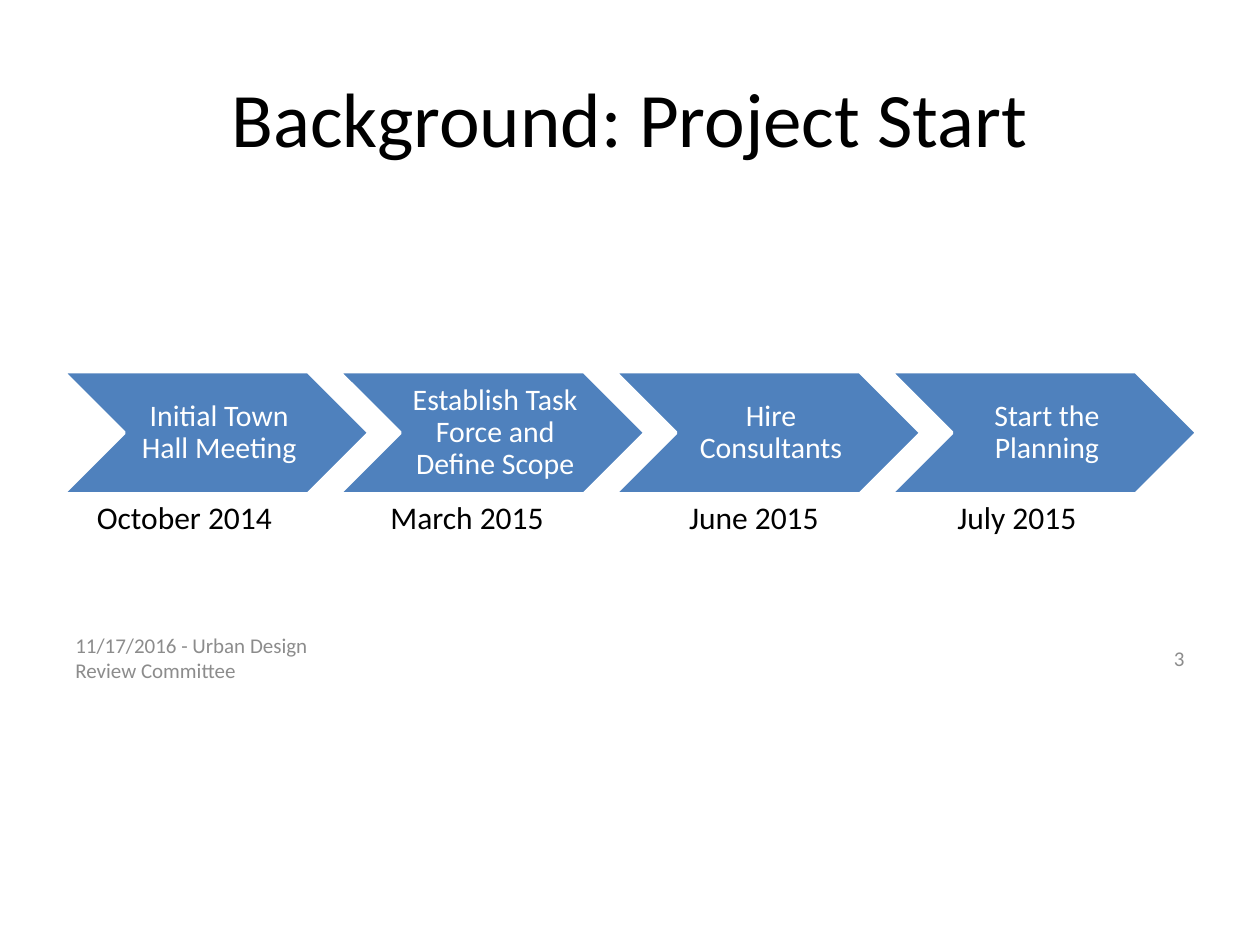
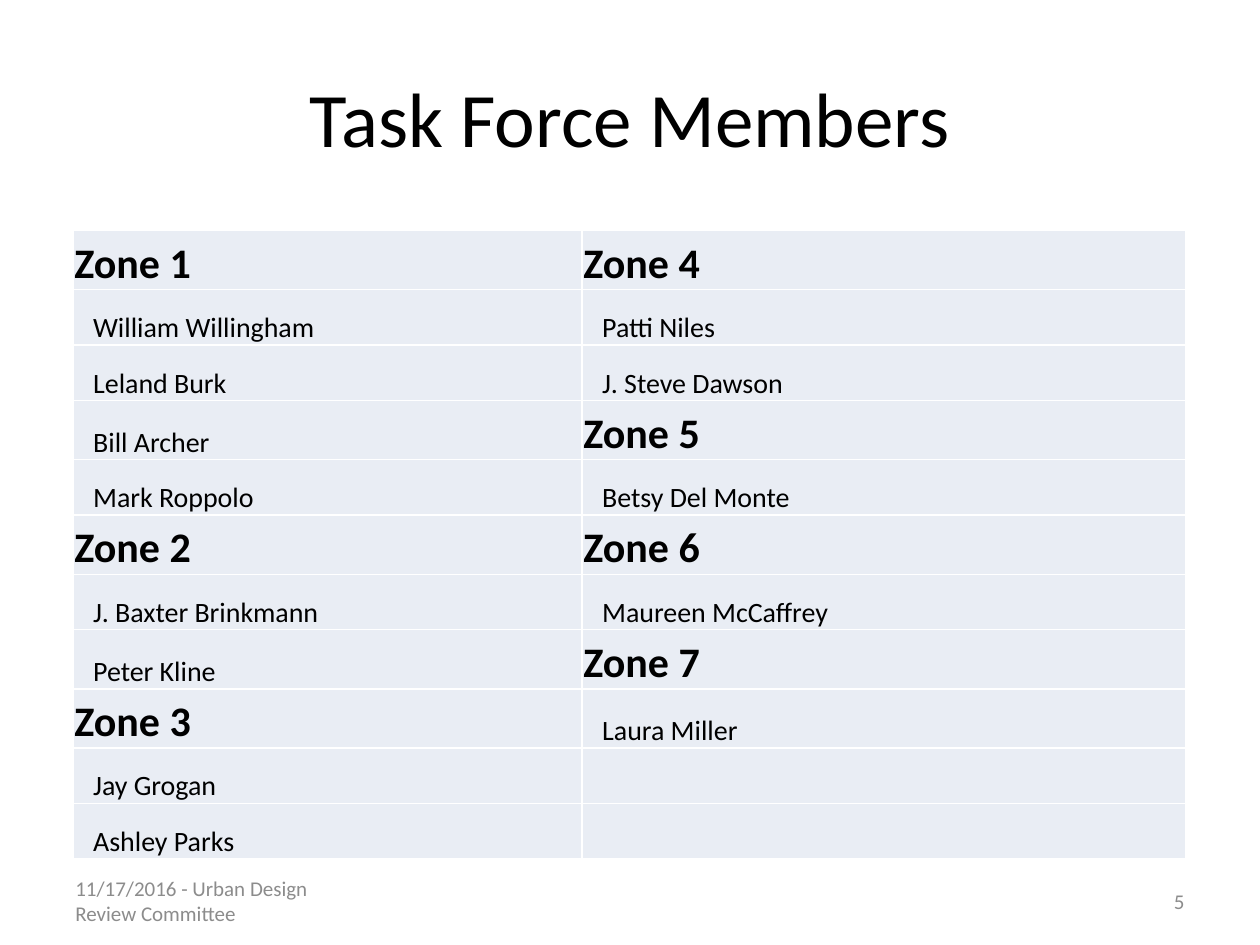
from lxml import etree
from pptx import Presentation
from pptx.dml.color import RGBColor
from pptx.enum.shapes import MSO_SHAPE as Shape
from pptx.enum.text import MSO_ANCHOR as Anchor, MSO_AUTO_SIZE as AutoSize, PP_ALIGN as Align
from pptx.oxml.ns import qn
from pptx.util import Emu, Pt

FONT = "Calibri"
BLACK, WHITE, GREY = "000000", "FFFFFF", "8C8C8C"
BLUE, PALE = "4F81BD", "E9EDF4"
FOOTER = "11/17/2016 - Urban Design Review Committee"

START = {"title": "Background: Project Start", "number": "3", "footer_top": 502}
MEMBERS = {"title": "Task Force Members", "number": "5", "footer_top": 695}

STEPS = [
    ("Initial Town Hall Meeting", "October 2014", 67, 167),
    ("Establish Task Force and Define Scope", "March 2015", 300, 143),
    ("Hire Consultants", "June 2015", 537, 125),
    ("Start the Planning", "July 2015", 750, 116),
]
STEP_LEFT, STEP_TOP, STEP_WIDTH, STEP_HEIGHT, STEP_PITCH = 50, 295, 243, 97, 219
DATE_TOP, DATE_HEIGHT = 390, 40

ZONE_COLUMNS = [
    [
        ("Zone 1", ["William Willingham", "Leland Burk", "Bill Archer", "Mark Roppolo"]),
        ("Zone 2", ["J. Baxter Brinkmann", "Peter Kline"]),
        ("Zone 3", ["Jay Grogan", "Ashley Parks"]),
    ],
    [
        ("Zone 4", ["Patti Niles", "J. Steve Dawson"]),
        ("Zone 5", ["Betsy Del Monte"]),
        ("Zone 6", ["Maureen McCaffrey"]),
        ("Zone 7", ["Laura Miller"]),
    ],
]
TABLE_LEFT, TABLE_TOP = 58, 183
COLUMN_WIDTHS = [404, 479]
ZONE_HEIGHT, NAME_HEIGHT = 47, 44
CELL_MARGIN, NAME_MARGIN = 1, 16


def px(length):
    return Emu(length * 9144)


def box(*lengths):
    return [px(length) for length in lengths]


def color(value):
    return RGBColor.from_string(value)


def write(text_frame, text, size, ink=BLACK, align=Align.LEFT, bold=False):
    text_frame.text = text
    paragraph = text_frame.paragraphs[0]
    paragraph.alignment = align
    for run in paragraph.runs:
        run.font.name = FONT
        run.font.size = Pt(size)
        run.font.bold = bold
        run.font.color.rgb = color(ink)
    return paragraph


def add_text(slide, place, text, size, ink=BLACK, align=Align.LEFT):
    text_frame = slide.shapes.add_textbox(*box(*place)).text_frame
    text_frame.word_wrap = True
    write(text_frame, text, size, ink, align)
    return text_frame


def add_slide(presentation, page):
    slide = presentation.slides.add_slide(presentation.slide_layouts[5])
    title = slide.shapes.title
    title.left, title.top, title.width, title.height = box(50, 30, 900, 125)
    title.text_frame.vertical_anchor = Anchor.MIDDLE
    title.text_frame.auto_size = AutoSize.NONE
    write(title.text_frame, page["title"], 44, align=Align.CENTER)
    for left, text, align in [(50, FOOTER, Align.LEFT), (717, page["number"], Align.RIGHT)]:
        place = (left, page["footer_top"], 233, 40)
        text_frame = add_text(slide, place, text, 12, GREY, align)
        text_frame.vertical_anchor = Anchor.MIDDLE
    return slide


def add_step(slide, index, label):
    left = STEP_LEFT + index * STEP_PITCH
    chevron = slide.shapes.add_shape(Shape.CHEVRON, *box(left, STEP_TOP, STEP_WIDTH, STEP_HEIGHT))
    chevron.shadow.inherit = False
    chevron.fill.solid()
    chevron.fill.fore_color.rgb = color(BLUE)
    chevron.line.color.rgb = color(WHITE)
    chevron.line.width = Pt(2)
    text_frame = chevron.text_frame
    text_frame.word_wrap = True
    text_frame.vertical_anchor = Anchor.MIDDLE
    text_frame.margin_left = px(7)
    text_frame.margin_top = text_frame.margin_right = text_frame.margin_bottom = px(2)
    write(text_frame, label, 17, WHITE, Align.CENTER).line_spacing = 0.9


def build_start(presentation):
    slide = add_slide(presentation, START)
    for index, (label, date, date_left, date_width) in enumerate(STEPS):
        add_step(slide, index, label)
        text_frame = add_text(slide, (date_left, DATE_TOP, date_width, DATE_HEIGHT), date, 18)
        text_frame.word_wrap = False
        text_frame.auto_size = AutoSize.SHAPE_TO_FIT_TEXT


def add_borders(cell):
    properties = cell._tc.get_or_add_tcPr()
    for index, side in enumerate(["lnL", "lnR", "lnT", "lnB"]):
        line = etree.Element(qn(f"a:{side}"), w=str(Pt(1)))
        fill = etree.SubElement(line, qn("a:solidFill"))
        etree.SubElement(fill, qn("a:srgbClr"), val=WHITE)
        properties.insert(index, line)


def fill_cell(cell, text, is_zone):
    cell.fill.solid()
    cell.fill.fore_color.rgb = color(PALE)
    add_borders(cell)
    cell.vertical_anchor = Anchor.BOTTOM
    cell.margin_left = px(CELL_MARGIN if is_zone else NAME_MARGIN)
    cell.margin_right = cell.margin_top = px(CELL_MARGIN)
    cell.margin_bottom = px(0)
    if text:
        write(cell.text_frame, text, 24 if is_zone else 16, bold=is_zone)


def list_entries(zones):
    entries = []
    for zone, names in zones:
        entries.append((zone, True))
        entries += [(name, False) for name in names]
    return entries


def build_members(presentation):
    slide = add_slide(presentation, MEMBERS)
    columns = [list_entries(zones) for zones in ZONE_COLUMNS]
    row_count = max(len(entries) for entries in columns)
    for entries in columns:
        entries += [("", False)] * (row_count - len(entries))
    rows = list(zip(*columns))
    heights = [ZONE_HEIGHT if any(is_zone for _, is_zone in row) else NAME_HEIGHT for row in rows]
    place = box(TABLE_LEFT, TABLE_TOP, sum(COLUMN_WIDTHS), sum(heights))
    table = slide.shapes.add_table(row_count, len(columns), *place).table
    table.first_row = table.horz_banding = False
    for column, width in zip(table.columns, COLUMN_WIDTHS):
        column.width = px(width)
    for row_index, (row, height) in enumerate(zip(rows, heights)):
        table.rows[row_index].height = px(height)
        for column_index, (text, is_zone) in enumerate(row):
            fill_cell(table.cell(row_index, column_index), text, is_zone)


def main():
    presentation = Presentation()
    presentation.slide_width, presentation.slide_height = box(1000, 750)
    build_start(presentation)
    build_members(presentation)
    presentation.save("out.pptx")


if __name__ == "__main__":
    main()
